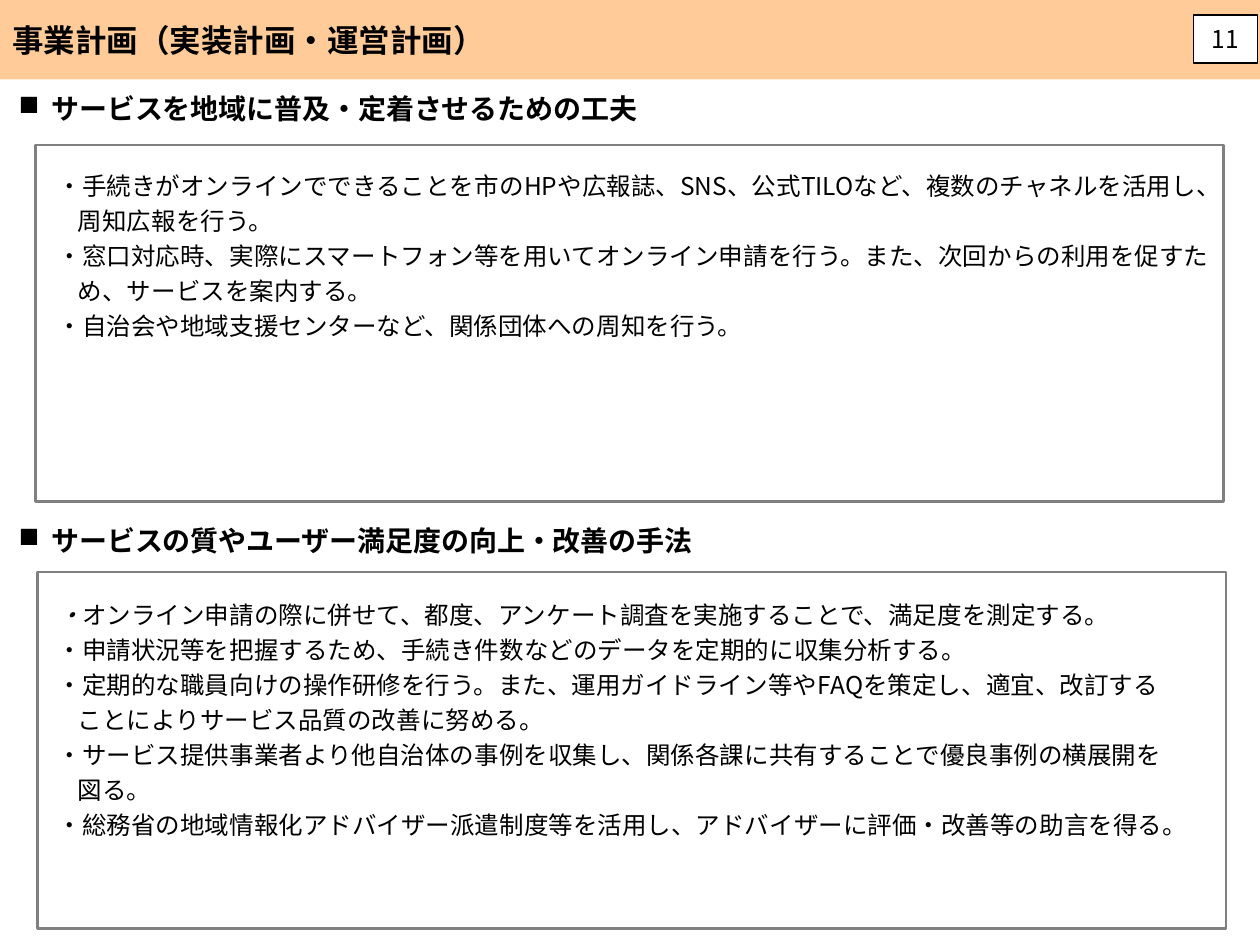
from lxml import etree
from pptx import Presentation
from pptx.dml.color import RGBColor
from pptx.enum import shapes, text
from pptx.oxml import ns
from pptx.util import Inches, Pt

FONT = "Noto Sans CJK JP"

HEADER = {"size": 18, "bold": True}
NUMBER = {"size": 14, "format": {"alignment": text.PP_ALIGN.CENTER}}
HEADING = {"size": 16, "bold": True, "indent": 0.26, "bullet": "■",
           "format": {"space_before": Pt(0.8)}}
BODY = {"size": 14, "indent": 0.16, "format": {"line_spacing": Pt(20)}}

sections = [
    {
        "heading": "サービスを地域に普及・定着させるための工夫",
        "heading_top": 0.68,
        "frame": (0.28, 1.15, 9.43, 2.83),
        "body": (0.36, 1.26, 9.36, 1.19),
        "items": [
            ["・手続きがオンラインでできることを市のHPや広報誌、SNS、公式TILOなど、複数のチャネルを活用し、周知広報を行う。"],
            ["・窓口対応時、実際にスマートフォン等を用いてオンライン申請を行う。また、次回からの利用を促すため、サービスを案内する。"],
            ["・自治会や地域支援センターなど、関係団体への周知を行う。"],
        ],
    },
    {
        "heading": "サービスの質やユーザー満足度の向上・改善の手法",
        "heading_top": 4.11,
        "frame": (0.3, 4.54, 9.43, 2.83),
        "body": (0.36, 4.67, 9.11, 1.75),
        "items": [
            ["・", "オンライン申請の際に併せて、都度、アンケート調査を実施することで、満足度を測定する。"],
            ["・申請状況等を把握するため、手続き件数などのデータを定期的に収集分析する。"],
            ["・定期的な職員向けの操作研修を行う。また、運用ガイドライン等やFAQを策定し、適宜、改訂することによりサービス品質の改善に努める。"],
            ["・サービス提供事業者より他自治体の事例を収集し、関係各課に共有することで優良事例の横展開を図る。"],
            ["・総務省の地域情報化アドバイザー派遣制度等を活用し、アドバイザーに評価・改善等の助言を得る。"],
        ],
    },
]

presentation = Presentation()
presentation.slide_width = Inches(10)
presentation.slide_height = Inches(7.5)
slide = presentation.slides.add_slide(presentation.slide_layouts[6])


def add_rectangle(box, fill=None, line=None, width=0.75):
    shape = slide.shapes.add_shape(shapes.MSO_SHAPE.RECTANGLE, *map(Inches, box))
    shape.shadow.inherit = False
    for target, color in ((shape.fill, fill), (shape.line.fill, line)):
        if color:
            target.solid()
            target.fore_color.rgb = RGBColor.from_string(color)
        else:
            target.background()
    if line:
        shape.line.width = Pt(width)
    return shape


def write(shape, paragraphs, style, anchor=text.MSO_ANCHOR.TOP):
    frame = shape.text_frame
    frame.word_wrap = True
    frame.vertical_anchor = anchor
    for index, runs in enumerate(paragraphs):
        paragraph = frame.add_paragraph() if index else frame.paragraphs[0]
        settings = {"alignment": text.PP_ALIGN.LEFT, **style.get("format", {})}
        for name, value in settings.items():
            setattr(paragraph, name, value)
        properties = paragraph._p.get_or_add_pPr()
        if "indent" in style:
            properties.set("marL", str(Inches(style["indent"])))
            properties.set("indent", str(-Inches(style["indent"])))
        if "bullet" in style:
            etree.SubElement(properties, ns.qn("a:buChar"), char=style["bullet"])
        for content in runs:
            run = paragraph.add_run()
            run.text = content
            font_settings = {"name": FONT, "size": Pt(style["size"]),
                             "bold": style.get("bold", False),
                             "italic": content == "・"}
            for name, value in font_settings.items():
                setattr(run.font, name, value)
            run.font.color.rgb = RGBColor.from_string("000000")
            etree.SubElement(run._r.get_or_add_rPr(), ns.qn("a:ea"), typeface=FONT)


header = add_rectangle((0, 0, 10, 0.63), fill="FFCC99")
write(header, [["事業計画（実装計画・運営計画）"]], HEADER, text.MSO_ANCHOR.MIDDLE)

for section in sections:
    heading_box = (0.05, section["heading_top"], 8.44, 0.37)
    add_rectangle(section["frame"], line="808080", width=1.5)
    for box, paragraphs, style in (
        (heading_box, [[section["heading"]]], HEADING),
        (section["body"], section["items"], BODY),
    ):
        text_box = slide.shapes.add_textbox(*map(Inches, box))
        write(text_box, paragraphs, style)
        text_box.text_frame.auto_size = text.MSO_AUTO_SIZE.SHAPE_TO_FIT_TEXT

number = add_rectangle((9.47, 0.12, 0.51, 0.38), fill="FFFFFF", line="000000")
write(number, [["11"]], NUMBER, text.MSO_ANCHOR.MIDDLE)

presentation.save("out.pptx")
